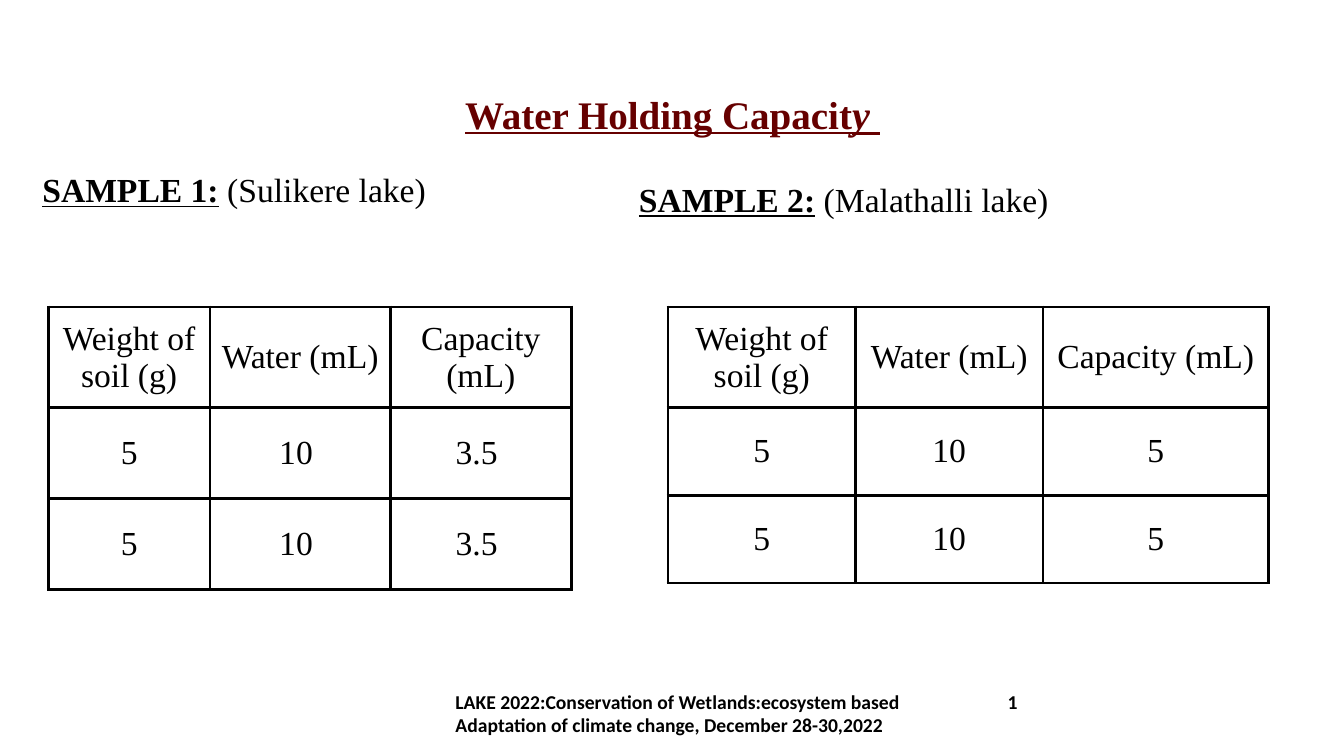
from lxml.etree import SubElement
from pptx import Presentation
from pptx.dml.color import RGBColor
from pptx.enum.text import MSO_ANCHOR, PP_ALIGN
from pptx.oxml.ns import qn
from pptx.util import Inches, Pt

COLORS = {"title": "660000", "ink": "000000"}
SERIF = {"name": "Times New Roman", "size": Pt(24), "bold": False}
LABEL = {**SERIF, "bold": True, "underline": True}
TITLE = {**LABEL, "size": Pt(27.9)}
TITLE_END = {**TITLE, "size": Pt(28.8), "italic": True}
FOOTER = {"name": "Calibri", "size": Pt(14), "bold": True}
HEADINGS = ["Weight of soil (g)", "Water (mL)", "Capacity (mL)"]

prs = Presentation()
prs.slide_width, prs.slide_height = Inches(13.33), Inches(7.5)


def share(left, top, width, height):
    w, h = prs.slide_width / 100, prs.slide_height / 100
    return [int(v) for v in (left * w, top * h, width * w, height * h)]


def place(sp, box):
    sp.left, sp.top, sp.width, sp.height = box


def set_frame(tf, inset_y, anchor=MSO_ANCHOR.TOP):
    formats = {"word_wrap": True, "vertical_anchor": anchor,
               "margin_left": Inches(0.1), "margin_right": Inches(0.1),
               "margin_top": Inches(inset_y), "margin_bottom": Inches(inset_y)}
    for name, value in formats.items():
        setattr(tf, name, value)


def add_run(p, text, formats, color="ink"):
    r = p.add_run()
    r.text = text
    for name, value in formats.items():
        setattr(r.font, name, value)
    r.font.color.rgb = RGBColor.from_string(COLORS[color])


def add_title(s, box):
    sp = s.shapes.title
    place(sp, box)
    set_frame(sp.text_frame, 0.05, MSO_ANCHOR.MIDDLE)
    p = sp.text_frame.paragraphs[0]
    p.alignment, p.line_spacing = PP_ALIGN.CENTER, 0.9
    add_run(p, "Water Holding Capacit", TITLE, "title")
    add_run(p, "y ", TITLE_END, "title")


def add_sample(sp, box, label, lake, inset_y, spacing):
    place(sp, box)
    set_frame(sp.text_frame, inset_y)
    p = sp.text_frame.paragraphs[0]
    p.line_spacing, p.space_before = spacing, Pt(0)
    pPr = p._p.get_or_add_pPr()
    pPr.set("marL", "0")
    pPr.set("indent", "0")
    SubElement(pPr, qn("a:buNone"))
    add_run(p, label, LABEL)
    add_run(p, f" ({lake})", SERIF)


def add_borders(cell):
    tcPr = cell._tc.get_or_add_tcPr()
    for side in ("L", "R", "T", "B"):
        ln = SubElement(tcPr, qn(f"a:ln{side}"), w=str(Pt(2.25)))
        fill = SubElement(ln, qn("a:solidFill"))
        SubElement(fill, qn("a:srgbClr"), val=COLORS["ink"])


def add_capacity_table(s, box, weights, reading):
    rows = [HEADINGS, reading, reading]
    table = s.shapes.add_table(len(rows), len(HEADINGS), *box).table
    table.first_row = table.horz_banding = False
    for column, weight in zip(table.columns, weights):
        column.width = int(box[2] * weight / sum(weights))
    for row, texts in zip(table.rows, rows):
        row.height = box[3] // len(rows)
        for cell, text in zip(row.cells, texts):
            add_borders(cell)
            cell.fill.background()
            cell.vertical_anchor = MSO_ANCHOR.MIDDLE
            for side in ("left", "right", "top", "bottom"):
                setattr(cell, f"margin_{side}", Inches(0.1))
            p = cell.text_frame.paragraphs[0]
            p.alignment = PP_ALIGN.CENTER
            add_run(p, text, SERIF)


def add_footer(s, box):
    tf = s.shapes.add_textbox(*box).text_frame
    set_frame(tf, 0.1)
    tf.margin_left = int(box[2] * 0.293)
    p = tf.paragraphs[0]
    tabs = SubElement(p._p.get_or_add_pPr(), qn("a:tabLst"))
    SubElement(tabs, qn("a:tab"), pos=str(int(box[2] * 0.446)), algn="l")
    add_run(p, "LAKE 2022:Conservation of Wetlands:ecosystem based\t1", FOOTER)
    add_run(tf.add_paragraph(), "Adaptation of climate change, December 28-30,2022", FOOTER)


def build_slide():
    s = prs.slides.add_slide(prs.slide_layouts[1])
    add_title(s, share(33.6, 8.4, 32.9, 13.9))
    add_sample(s.placeholders[1], share(2.4, 22.3, 41.2, 67.7),
               "SAMPLE 1:", "Sulikere lake", 0.05, 0.9)
    box = share(46.8, 22.3, 50.6, 59.7)
    add_sample(s.shapes.add_textbox(*box), box,
               "SAMPLE 2:", "Malathalli lake", 0.1, 1.0)
    add_capacity_table(s, share(3.6, 40.6, 38.9, 36), (1.6, 1.79, 1.79),
                       ["5", "10 ", "3.5 "])
    add_capacity_table(s, share(49.7, 40.6, 44.7, 34.8), (1.86, 1.86, 2.24),
                       ["5", "10", "5"])
    add_footer(s, share(6.9, 89.9, 92.1, 10.1))


if __name__ == "__main__":
    build_slide()
    prs.save("out.pptx")
